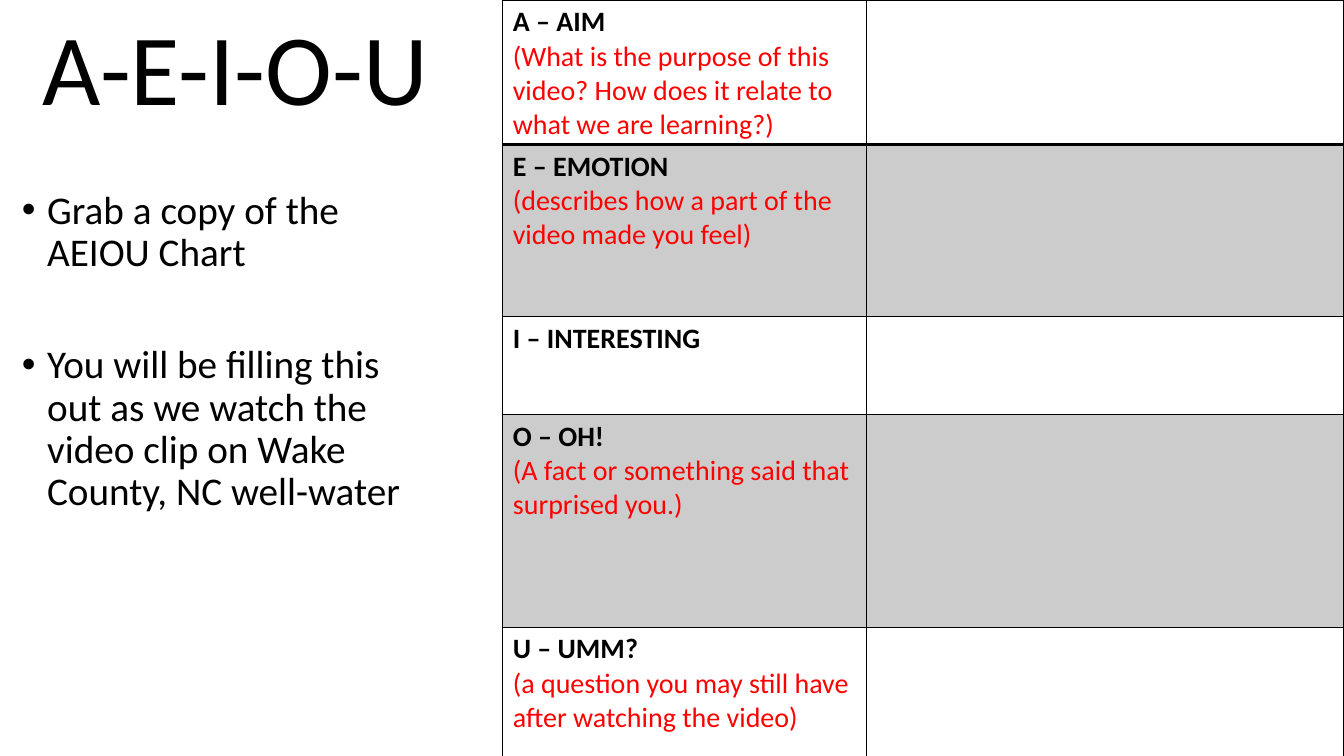
"""Build the A-E-I-O-U video response slide with its instructions and chart."""
from lxml.etree import SubElement
from pptx import Presentation
from pptx.dml.color import RGBColor
from pptx.enum.text import MSO_ANCHOR, PP_ALIGN
from pptx.oxml import parse_xml
from pptx.oxml.ns import nsdecls, qn
from pptx.util import Cm, Pt

BLACK = RGBColor(0x00, 0x00, 0x00)
RED = RGBColor(0xFF, 0x00, 0x00)
FONT = "Calibri"

INSTRUCTIONS = [
    ("Grab a copy of the AEIOU Chart", 10),
    ("You will be filling this out as we watch the video clip on Wake County, NC well-water", 50),
]
PROMPTS = [
    ("A – AIM", "(What is the purpose of this video? How does it relate to what we are learning?)", 3.3),
    ("E – EMOTION", "(describes how a part of the video made you feel)", 4.34),
    ("I – INTERESTING", "", 2.46),
    ("O – OH!", "(A fact or something said that surprised you.)", 5.36),
    ("U – UMM?", "(a question you may still have after watching the video)", 4.34),
]
COLUMN_WIDTHS = [9.17, 12.01]


def style_text(paragraph, size, color=BLACK, bold=False):
    for run in paragraph.runs:
        run.font.name = FONT
        run.font.size = Pt(size)
        run.font.color.rgb = color
        run.font.bold = bold


def add_borders(cell, bottom_points):
    edges = [("lnL", 1), ("lnR", 1), ("lnT", 1), ("lnB", bottom_points)]
    for position, (edge, points) in enumerate(edges):
        line = parse_xml(
            f'<a:{edge} {nsdecls("a")} w="{Pt(points)}"><a:solidFill>'
            f'<a:srgbClr val="{BLACK}"/></a:solidFill></a:{edge}>'
        )
        cell._tc.get_or_add_tcPr().insert(position, line)


prs = Presentation()
prs.slide_width, prs.slide_height = Cm(33.87), Cm(19.05)
slide = prs.slides.add_slide(prs.slide_layouts[6])

title = slide.shapes.add_textbox(Cm(0.3), Cm(0), Cm(11.84), Cm(3.68)).text_frame
title.word_wrap = True
title.vertical_anchor = MSO_ANCHOR.MIDDLE
title.text = "A-E-I-O-U "
title.paragraphs[0].alignment = PP_ALIGN.CENTER
title.paragraphs[0].line_spacing = 0.9
style_text(title.paragraphs[0], 72)

instructions = slide.shapes.add_textbox(Cm(0.3), Cm(4.67), Cm(10.59), Cm(13.41)).text_frame
instructions.word_wrap = True
instructions.text = "\n".join(text for text, _ in INSTRUCTIONS)
for instruction, (_, space_before) in zip(instructions.paragraphs, INSTRUCTIONS):
    instruction.line_spacing = 0.9
    instruction.space_before = Pt(space_before)
    style_text(instruction, 28)
    properties = instruction._p.get_or_add_pPr()
    properties.set("marL", str(Cm(0.64)))
    properties.set("indent", str(-Cm(0.64)))
    SubElement(properties, qn("a:buFont"), typeface="Arial")
    SubElement(properties, qn("a:buChar"), char="•")

chart = slide.shapes.add_table(
    len(PROMPTS), len(COLUMN_WIDTHS), Cm(12.67), Cm(0),
    Cm(sum(COLUMN_WIDTHS)), Cm(sum(height for _, _, height in PROMPTS)),
).table
chart.first_row = False
chart.horz_banding = False
for column, width in zip(chart.columns, COLUMN_WIDTHS):
    column.width = Cm(width)

for index, (heading, hint, height) in enumerate(PROMPTS):
    row = chart.rows[index]
    row.height = Cm(height)
    for cell in row.cells:
        if index % 2:
            cell.fill.solid()
            cell.fill.fore_color.rgb = BLACK
            shade = cell._tc.tcPr.find(".//" + qn("a:srgbClr"))
            SubElement(shade, qn("a:alpha"), val="20000")
        else:
            cell.fill.background()
        add_borders(cell, 2 if index == 0 else 1)
    prompt = row.cells[0].text_frame
    prompt.text = heading
    style_text(prompt.paragraphs[0], 20, bold=True)
    if hint:
        hint_line = prompt.add_paragraph()
        hint_line.text = hint
        style_text(hint_line, 20, RED)

prs.save("out.pptx")
